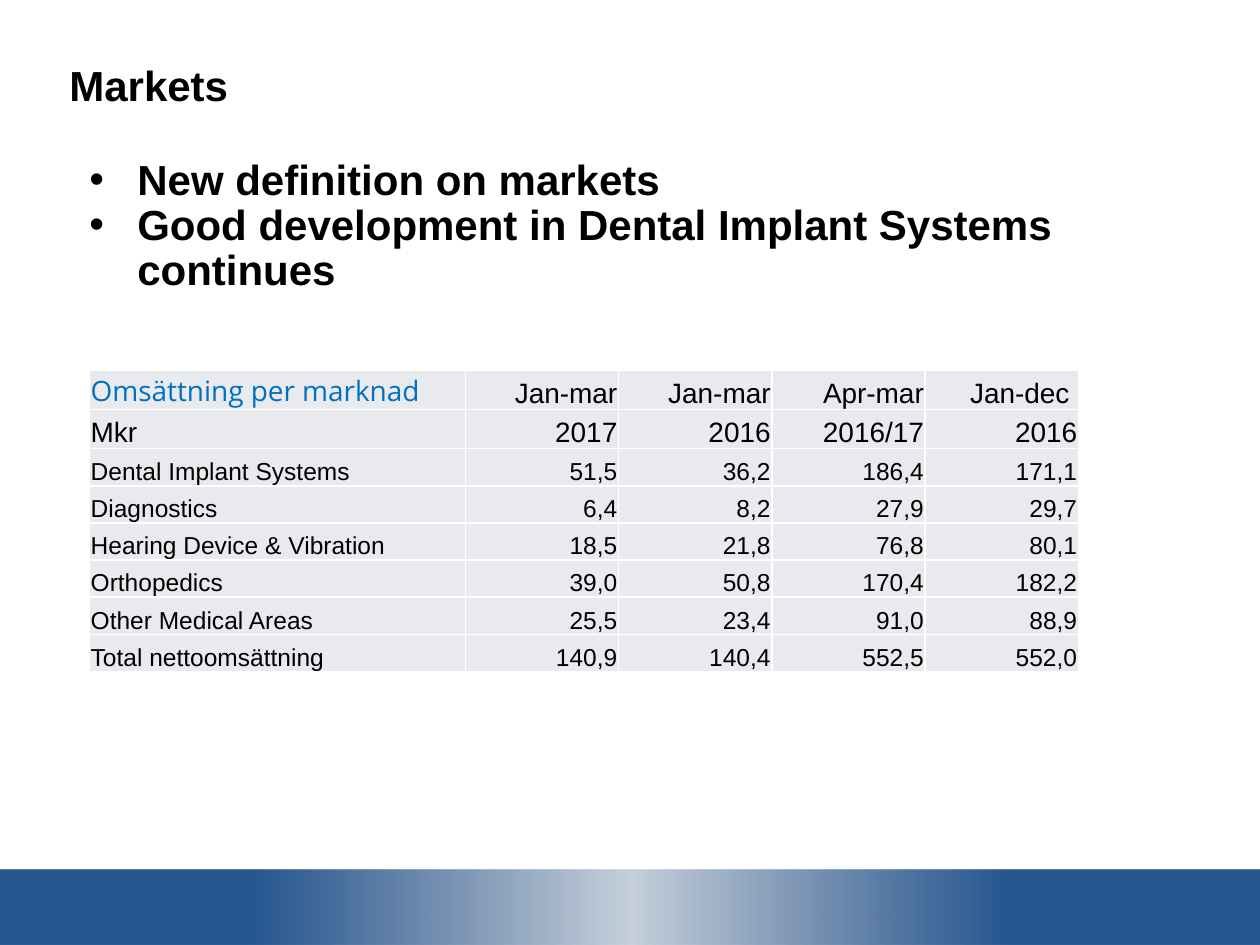
from dataclasses import dataclass

from lxml.etree import SubElement as Sub
from pptx import Presentation
from pptx.dml.color import RGBColor as Rgb
from pptx.enum.shapes import MSO_SHAPE as Form
from pptx.enum.text import MSO_ANCHOR as Anchor, PP_ALIGN as Align
from pptx.oxml.ns import qn
from pptx.util import Emu, Inches, Pt


@dataclass(frozen=True)
class Theme:
    font: str = "Arial"
    accent: str = "Open Sans"
    ink: str = "000000"
    blue: str = "0070C0"
    cell: str = "E8EAEE"
    rule: str = "FFFFFF"
    band: str = "275791"
    glow: str = "1F4674"
    head: int = 24
    label: int = 16
    body: int = 14


THEME = Theme()
UNIT = Inches(0.1)  # the slide is a grid of 100 columns by 75 rows
COLS, ROWS = 100, 75

POINTS = ["New definition on markets",
          "Good development in Dental Implant Systems continues"]
SALES = [
    ["Omsättning per marknad", "Jan-mar", "Jan-mar", "Apr-mar", "Jan-dec "],
    ["Mkr", "2017", "2016", "2016/17", "2016"],
    ["Dental Implant Systems", "51,5", "36,2", "186,4", "171,1"],
    ["Diagnostics", "6,4", "8,2", "27,9", "29,7"],
    ["Hearing Device & Vibration", "18,5", "21,8", "76,8", "80,1"],
    ["Orthopedics", "39,0", "50,8", "170,4", "182,2"],
    ["Other Medical Areas", "25,5", "23,4", "91,0", "88,9"],
    ["Total nettoomsättning", "140,9", "140,4", "552,5", "552,0"],
]
HEADS = 2  # heading rows of the table


def grid(*units):
    return [Emu(round(n * UNIT)) for n in units]


def style(para, size, color=THEME.ink, name=THEME.font, bold=False):
    for run in para.runs:
        font = run.font
        font.size, font.name, font.bold = Pt(size), name, bold
        font.color.rgb = Rgb.from_string(color)


def tint(parent, color, alpha=None):
    """Add a colour, with its opacity in percent, to an XML fill or stop."""
    node = Sub(parent, qn("a:srgbClr"), val=color)
    if alpha is not None:
        Sub(node, qn("a:alpha"), val=str(alpha * 1000))


def add_text(slide, box, lines, bullet=False):
    frame = slide.shapes.add_textbox(*grid(*box)).text_frame
    frame.word_wrap = True
    frame.margin_left = frame.margin_right = 0
    frame.margin_top = frame.margin_bottom = 0
    frame.text = "\n".join(lines)
    for para in frame.paragraphs:
        if bullet:
            props = para._p.get_or_add_pPr()
            dent = Inches(0.38)
            props.set("marL", str(dent))
            props.set("indent", str(-dent))
            Sub(props, qn("a:buFont"), typeface=THEME.font)
            Sub(props, qn("a:buChar"), char="•")
        para.line_spacing = 0.9
        style(para, THEME.head, bold=True)


def add_band(slide, box):
    band = slide.shapes.add_shape(Form.RECTANGLE, *grid(*box))
    band.shadow.inherit = False
    band.line.fill.background()
    band.fill.gradient()
    band.fill.gradient_angle = 0
    stops = band._element.spPr.find(qn("a:gradFill")).find(qn("a:gsLst"))
    stops.clear()
    for spot in (0, 20, 50, 80, 100):
        stop = Sub(stops, qn("a:gs"), pos=str(spot * 1000))
        if spot == 50:
            tint(stop, THEME.glow, 25)
        else:
            tint(stop, THEME.band)


def add_rules(cell):
    props = cell._tc.get_or_add_tcPr()
    for side in "LRTB":
        line = Sub(props, qn("a:ln" + side), w=str(Pt(1)))
        tint(Sub(line, qn("a:solidFill")), THEME.rule)


def fill_cell(cell, text, row, col):
    cell.margin_left = cell.margin_right = cell.margin_top = Inches(0.01)
    cell.margin_bottom = 0
    cell.vertical_anchor = Anchor.BOTTOM
    add_rules(cell)
    cell.fill.solid()
    cell.fill.fore_color.rgb = Rgb.from_string(THEME.cell)
    cell.text_frame.text = text
    para = cell.text_frame.paragraphs[0]
    para.alignment = Align.RIGHT if col else Align.LEFT
    if row == col == 0:
        style(para, THEME.label, THEME.blue, THEME.accent)
    else:
        style(para, THEME.label if row < HEADS else THEME.body)


def add_sales(slide, box):
    """Draw the table: a wide first column, then equal ones; taller heads."""
    wide, high = box[2:]
    count = len(SALES[0])
    table = slide.shapes.add_table(len(SALES), count, *grid(*box)).table
    table.first_row = table.horz_banding = False
    first = 0.38 * wide
    for num, col in enumerate(table.columns):
        col.width = grid((wide - first) / (count - 1) if num else first)[0]
    head = 0.13 * high
    rest = (high - HEADS * head) / (len(SALES) - HEADS)
    for num, row in enumerate(table.rows):
        row.height = grid(head if num < HEADS else rest)[0]
    for num, texts in enumerate(SALES):
        for col, text in enumerate(texts):
            fill_cell(table.cell(num, col), text, num, col)


def add_markets(deck):
    slide = deck.slides.add_slide(deck.slide_layouts[6])
    add_band(slide, (0, 69, COLS, 6))
    add_text(slide, (5.5, 5.2, 88.9, 6.3), ["Markets"])
    add_text(slide, (7.1, 12.6, 88.9, 6.3), POINTS, bullet=True)
    add_sales(slide, (7.1, 29.4, 78.5, 23.9))


def main():
    deck = Presentation()
    deck.slide_width, deck.slide_height = grid(COLS, ROWS)
    add_markets(deck)
    deck.save("out.pptx")


if __name__ == "__main__":
    main()
